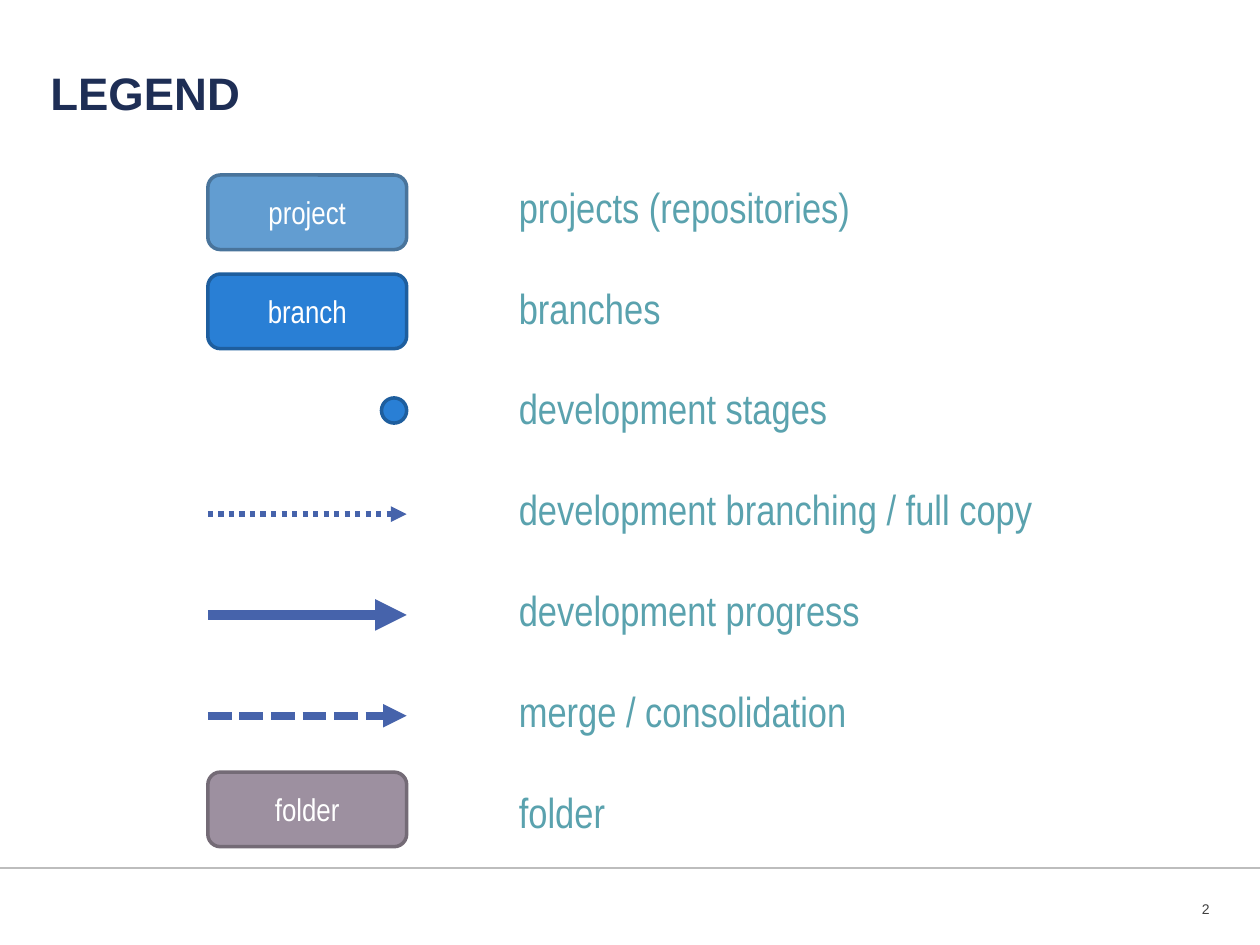
from dataclasses import dataclass
from typing import Optional

import pptx
import pptx.dml.color
import pptx.enum.dml
import pptx.enum.shapes
import pptx.enum.text
import pptx.oxml.ns
import pptx.util
from lxml import etree

Pt = pptx.util.Pt
Align = pptx.enum.text.PP_ALIGN
Anchor = pptx.enum.text.MSO_ANCHOR
Shape = pptx.enum.shapes.MSO_SHAPE
Dash = pptx.enum.dml.MSO_LINE

SYMBOL_LEFT = 118.8
SYMBOL_RIGHT = 232.4
ROW_PITCH = 57.6
LINE_HEIGHT = ROW_PITCH / 2
FIRST_ARROW_Y = 293.8
DOT_SIZE = 14.4
ARROW_COLOUR = "4663AB"


@dataclass
class Tag:
    label: str
    top: float
    fill: str
    outline: str


@dataclass
class Arrow:
    width: float
    dash: Optional[Dash]


TAGS = [
    Tag("project", 100, "629DD1", "49749B"),
    Tag("branch", 156.6, "297FD5", "1E5E9E"),
    Tag("folder", 441.2, "9D90A0", "746B76"),
]
ARROWS = [Arrow(3, Dash.ROUND_DOT), Arrow(6, None), Arrow(4.5, Dash.SQUARE_DOT)]
MEANINGS = [
    "projects (repositories)",
    "branches",
    "development stages",
    "development branching / full copy",
    "development progress",
    "merge / consolidation",
    "folder",
]


def colour(value: str) -> pptx.dml.color.RGBColor:
    return pptx.dml.color.RGBColor.from_string(value)


def add_child(parent, tag: str, **attributes: str) -> None:
    etree.SubElement(parent, pptx.oxml.ns.qn(tag), **attributes)


def style_text(para, name: str, size: float, hex_colour: str, bold: bool = False) -> None:
    para.font.name = name
    para.font.size = Pt(size)
    para.font.bold = bold
    para.font.color.rgb = colour(hex_colour)


def add_text_box(page, left: float, top: float, width: float, height: float):
    """Add a wrapping, vertically centred box without insets; return its frame."""
    frame = page.shapes.add_textbox(Pt(left), Pt(top), Pt(width), Pt(height)).text_frame
    frame.word_wrap = True
    frame.vertical_anchor = Anchor.MIDDLE
    frame.margin_left = frame.margin_right = frame.margin_top = frame.margin_bottom = 0
    return frame


def add_filled(page, kind, left: float, top: float, width: float, height: float,
               fill: str, outline: str):
    shape = page.shapes.add_shape(kind, Pt(left), Pt(top), Pt(width), Pt(height))
    shape.shadow.inherit = False
    shape.fill.solid()
    shape.fill.fore_color.rgb = colour(fill)
    shape.line.color.rgb = colour(outline)
    shape.line.width = Pt(2)
    return shape


def add_line(page, left: float, right: float, y: float, hex_colour: str, width: float):
    line = page.shapes.add_connector(
        pptx.enum.shapes.MSO_CONNECTOR.STRAIGHT, Pt(left), Pt(y), Pt(right), Pt(y))
    line.line.color.rgb = colour(hex_colour)
    line.line.width = Pt(width)
    add_child(line._element.spPr, "a:effectLst")
    return line


def add_tag(page, tag: Tag) -> None:
    shape = add_filled(page, Shape.ROUNDED_RECTANGLE, SYMBOL_LEFT, tag.top,
                       SYMBOL_RIGHT - SYMBOL_LEFT, 42.6, tag.fill, tag.outline)
    frame = shape.text_frame
    frame.vertical_anchor = Anchor.MIDDLE
    para = frame.paragraphs[0]
    para.text = tag.label
    para.alignment = Align.CENTER
    style_text(para, "Arial Narrow", 18, "FFFFFF")


def add_arrow(page, arrow: Arrow, y: float) -> None:
    line = add_line(page, SYMBOL_LEFT, SYMBOL_RIGHT, y, ARROW_COLOUR, arrow.width)
    if arrow.dash is not None:
        line.line.dash_style = arrow.dash
    add_child(line.line._get_or_add_ln(), "a:tailEnd", type="triangle")


def add_meanings(page) -> None:
    box = page.shapes.add_textbox(Pt(289.4), Pt(100), Pt(396.7), Pt(385.2))
    frame = box.text_frame
    frame.word_wrap = True
    for index, meaning in enumerate(MEANINGS):
        para = frame.add_paragraph() if index else frame.paragraphs[0]
        para.text = meaning
        para.line_spacing = Pt(LINE_HEIGHT)
        para.space_before = Pt(LINE_HEIGHT if index else 0)
        style_text(para, "Arial Narrow", 24, "5AA2AE")


def main() -> None:
    deck = pptx.Presentation()
    deck.slide_width, deck.slide_height = Pt(720), Pt(540)
    page = deck.slides.add_slide(deck.slide_layouts[6])

    rule = add_line(page, 0, 720, 496, "000000", 1)
    rule_colour = rule.line._get_or_add_ln().find(".//" + pptx.oxml.ns.qn("a:srgbClr"))
    add_child(rule_colour, "a:alpha", val="25000")

    title = add_text_box(page, 28.8, 27.4, 551.5, 55.4).paragraphs[0]
    title.text = "LEGEND"
    title.line_spacing = Pt(27)
    style_text(title, "Arial", 26, "1E2E55", bold=True)

    number = add_text_box(page, 625, 506.2, 66.2, 25.9).paragraphs[0]
    number.text = "2"
    number.alignment = Align.RIGHT
    style_text(number, "Arial", 8, "404040")

    for tag in TAGS:
        add_tag(page, tag)
    add_filled(page, Shape.OVAL, SYMBOL_RIGHT - DOT_SIZE, 227.4, DOT_SIZE, DOT_SIZE,
               "297FD5", "1E5E9E")
    for row, arrow in enumerate(ARROWS):
        add_arrow(page, arrow, FIRST_ARROW_Y + row * ROW_PITCH)
    add_meanings(page)

    deck.save("out.pptx")


if __name__ == "__main__":
    main()
